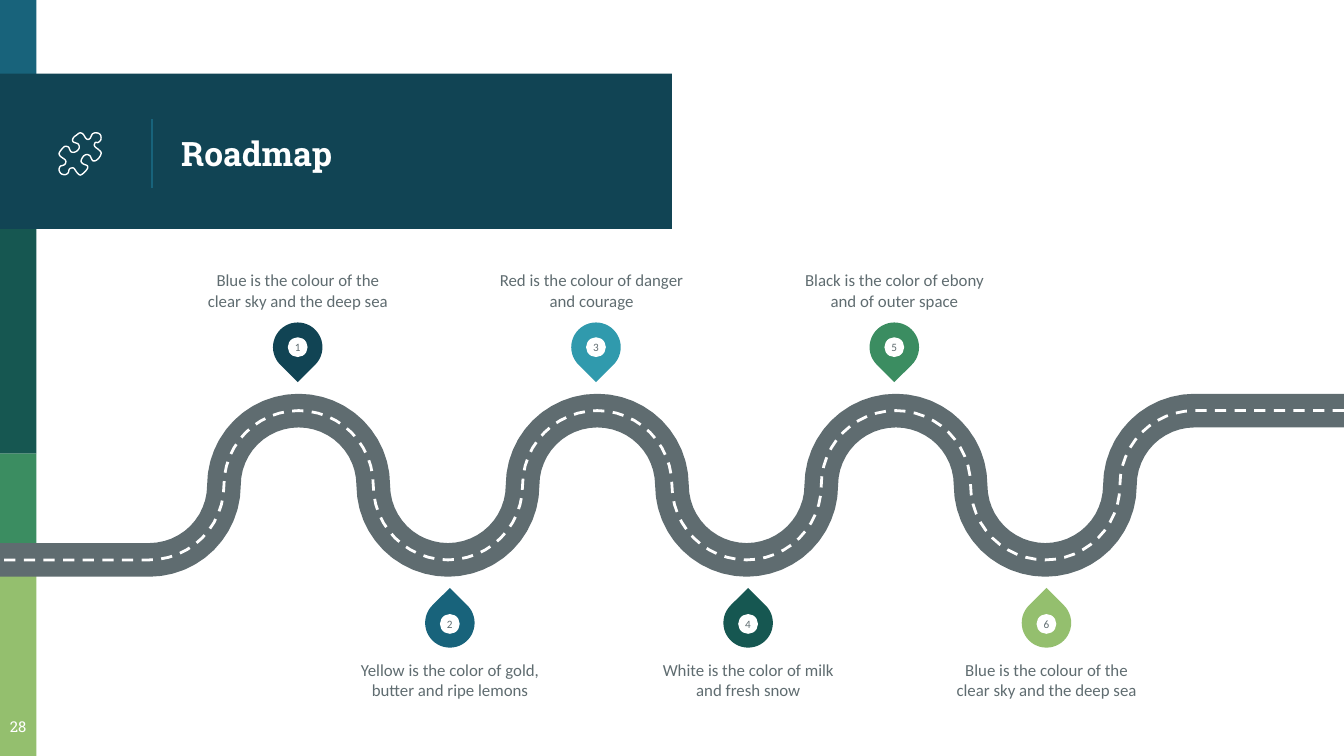
from math import cos, pi, sin

from lxml import etree
from pptx import Presentation
from pptx.dml.color import RGBColor
from pptx.enum.dml import MSO_LINE
from pptx.enum.shapes import MSO_CONNECTOR, MSO_SHAPE
from pptx.enum.text import MSO_ANCHOR, PP_ALIGN
from pptx.oxml.ns import qn
from pptx.util import Pt

RECT, OVAL, DROP = MSO_SHAPE.RECTANGLE, MSO_SHAPE.OVAL, MSO_SHAPE.TEAR
LINE, DASH = MSO_CONNECTOR.STRAIGHT, MSO_LINE.DASH
LEFT, CENTER = PP_ALIGN.LEFT, PP_ALIGN.CENTER
TOP, MIDDLE, BOTTOM = MSO_ANCHOR.TOP, MSO_ANCHOR.MIDDLE, MSO_ANCHOR.BOTTOM

WHITE = RGBColor(0xFF, 0xFF, 0xFF)
GREY = RGBColor(0x5F, 0x6C, 0x70)
NAVY = RGBColor(0x11, 0x44, 0x54)
BLUE = RGBColor(0x18, 0x63, 0x7B)
TEAL = RGBColor(0x30, 0x9A, 0xAD)
PINE = RGBColor(0x16, 0x57, 0x51)
GREEN = RGBColor(0x3B, 0x8D, 0x61)
LIME = RGBColor(0x94, 0xBF, 0x6E)

HEAD = {"name": "Roboto Slab", "size": Pt(18), "bold": True}
PAGE = {"name": "Roboto Slab", "size": Pt(8)}
BODY = {"name": "Calibri", "size": Pt(9)}
DIGIT = {"name": "Calibri", "size": Pt(6)}

WIDE, HIGH = 720, 405
BAR = 19.5           # width of the side bar
BENDS, BEND = 8, 40  # number of bends in the road and their radius
STEP = 159.8         # from one pin to the next in a row
PIN, DOT = 26.5, 10.6

# Top, bottom and colour of each side bar
BARS = [(0, 42, BLUE), (122.5, 243, PINE), (243, 291, GREEN), (291, HIGH, LIME)]

# Each row: first pin x, pin y, dot y, turn, label top, label anchor, steps;
# each step: number, colour, label, label shift
ROWS = [
    (159.5, 186, 186, 135, 124.5, BOTTOM, [
        ("1", NAVY, "Blue is the colour of the clear sky and the deep sea", 0),
        ("3", TEAL, "Red is the colour of danger and courage", -2.5),
        ("5", GREEN, "Black is the color of ebony and of outer space", 0)]),
    (241, 333.7, 334.3, 315, 353.5, TOP, [
        ("2", BLUE, "Yellow is the color of gold, butter and ripe lemons", 0),
        ("4", PINE, "White is the color of milk and fresh snow", 0),
        ("6", LIME, "Blue is the colour of the clear sky and the deep sea", 0)]),
]

# Key points of the puzzle piece, in hundredths of an inch
PUZZLE = [
    (71, 106), (73, 106), (75, 104), (75, 101), (73.5, 99.3), (71, 98.8),
    (69, 99.5), (68, 101), (67, 103), (65.5, 103.7), (64, 103), (62, 100),
    (60.5, 99), (59, 99), (57, 100.5), (55, 102), (54, 104), (54.5, 105.5),
    (56, 106.2), (58, 107), (59, 109), (58.5, 111), (57, 112.5), (55, 113.3),
    (53, 113), (52, 111.5), (51.2, 109.7), (50, 109), (48, 109), (46, 111),
    (44.5, 113), (44, 114.5), (45, 116.3), (48, 118.5), (49, 120), (48.5, 122),
    (47, 123), (45, 123.6), (44, 125.5), (44.2, 127.3), (45.5, 129.2),
    (48, 130), (50, 129.3), (51, 128), (51.5, 126), (53, 125), (55, 125.2),
    (57, 128), (59, 130), (60.5, 130), (63, 128), (65, 125.5), (65.3, 124),
    (64.5, 123), (62, 122), (60.5, 120.5), (60.5, 119), (61.5, 117),
    (63, 115.5), (65, 115), (67, 116), (68, 118), (69, 119.5), (70.5, 119.7),
    (72, 119), (74, 117), (75.2, 114.5), (75, 113), (73, 111), (71, 109.5),
    (70.2, 108)]


def style(item, values):
    for name, value in values.items():
        setattr(item, name, value)


def add_block(shapes, kind, x, y, w, h, fill):
    block = shapes.add_shape(kind, Pt(x), Pt(y), Pt(w), Pt(h))
    block.shadow.inherit = False
    block.fill.solid()
    block.fill.fore_color.rgb = fill
    block.line.fill.background()
    return block


def write(shape, text, font, color, align=CENTER, anchor=TOP, inset=0, wrap=True):
    frame = shape.text_frame
    sides = ("left", "right", "top", "bottom")
    style(frame, {f"margin_{side}": Pt(inset) for side in sides})
    style(frame, {"word_wrap": wrap, "vertical_anchor": anchor})
    par = frame.paragraphs[0]
    par.alignment = align
    run = par.add_run()
    run.text = text
    style(run.font, font)
    run.font.color.rgb = color


def add_label(shapes, x, y, w, h, *args, **format):
    write(shapes.add_textbox(Pt(x), Pt(y), Pt(w), Pt(h)), *args, **format)


def add_path(shapes, points, color, width, close=False, dash=None):
    points = [(Pt(x), Pt(y)) for x, y in points]
    maker = shapes.build_freeform(*points[0])
    maker.add_line_segments(points[1:], close=close)
    path = maker.convert_to_shape()
    path.shadow.inherit = False
    path.fill.background()
    path.line.color.rgb = color
    style(path.line, {"width": Pt(width), "dash_style": dash})


def add_rule(shapes, x, top, end, color):
    rule = shapes.add_connector(LINE, Pt(x), Pt(top), Pt(x), Pt(end))
    rule.line.color.rgb = color
    rule.line.width = Pt(0.75)
    etree.SubElement(rule._element.spPr, qn("a:effectLst"))


def add_pin(shapes, x, y, dot_y, turn, text, fill):
    group = shapes.add_group_shape().shapes
    drop = add_block(group, DROP, x - PIN / 2, y - PIN / 2, PIN, PIN, fill)
    drop.rotation = turn
    dot = add_block(group, OVAL, x - DOT / 2, dot_y - DOT / 2, DOT, DOT, WHITE)
    write(dot, text, DIGIT, GREY, anchor=MIDDLE, wrap=False)


def road():
    """Half circles from right to left; the first and last are quarters."""
    points = [(WIDE, 220)]
    parts = 24
    for i in range(BENDS):
        mid = 640 - 2 * BEND * i
        side = 1 if i % 2 else -1
        start = parts // 2 if i == 0 else 0
        end = parts // 2 if i == BENDS - 1 else parts
        for j in range(start, end + 1):
            turn = pi * j / parts
            points.append((mid + BEND * cos(turn), 260 + side * BEND * sin(turn)))
    return points + [(0, 300)]


def smooth(points, parts=4):
    """A closed Catmull-Rom curve through the points."""
    curve = []
    for i in range(len(points)):
        knots = [points[(i + k) % len(points)] for k in (-1, 0, 1, 2)]
        for j in range(parts):
            t = j / parts
            curve.append(tuple(
                b + t * (c - a + t * (2 * a - 5 * b + 4 * c - d
                                      + t * (3 * (b - c) + d - a))) / 2
                for a, b, c, d in zip(*knots)))
    return curve


def main():
    deck = Presentation()
    style(deck, {"slide_width": Pt(WIDE), "slide_height": Pt(HIGH)})
    shapes = deck.slides.add_slide(deck.slide_layouts[6]).shapes

    # Side bars and title band
    for top, end, color in BARS:
        add_block(shapes, RECT, 0, top, BAR, end - top, color)
    add_block(shapes, RECT, 0, 39.5, 360, 83.2, NAVY)
    add_rule(shapes, 81.5, 64, 100.8, BLUE)
    add_label(shapes, 90, 42, 252.5, 80.5, "Roadmap", HEAD, WHITE,
              align=LEFT, anchor=MIDDLE, inset=7.2)
    add_label(shapes, -4, 379.5, 27.5, 25, "28", PAGE, WHITE, inset=7.2)

    # Road with its dashed centre line
    add_path(shapes, road(), GREY, 18)
    add_path(shapes, road(), WHITE, 1.5, dash=DASH)

    # Numbered pins and their labels
    for first, y, dot_y, turn, top, anchor, steps in ROWS:
        for i, (digit, color, text, shift) in enumerate(steps):
            x = first + STEP * i
            add_pin(shapes, x, y, dot_y, turn, digit, color)
            add_label(shapes, x + shift - 50.75, top, 101.5, 41.8,
                      text, BODY, GREY, anchor=anchor)

    # Puzzle icon
    piece = [(x * 0.72, y * 0.72) for x, y in PUZZLE]
    add_path(shapes, smooth(piece), WHITE, 0.75, close=True)

    deck.save("out.pptx")


if __name__ == "__main__":
    main()
